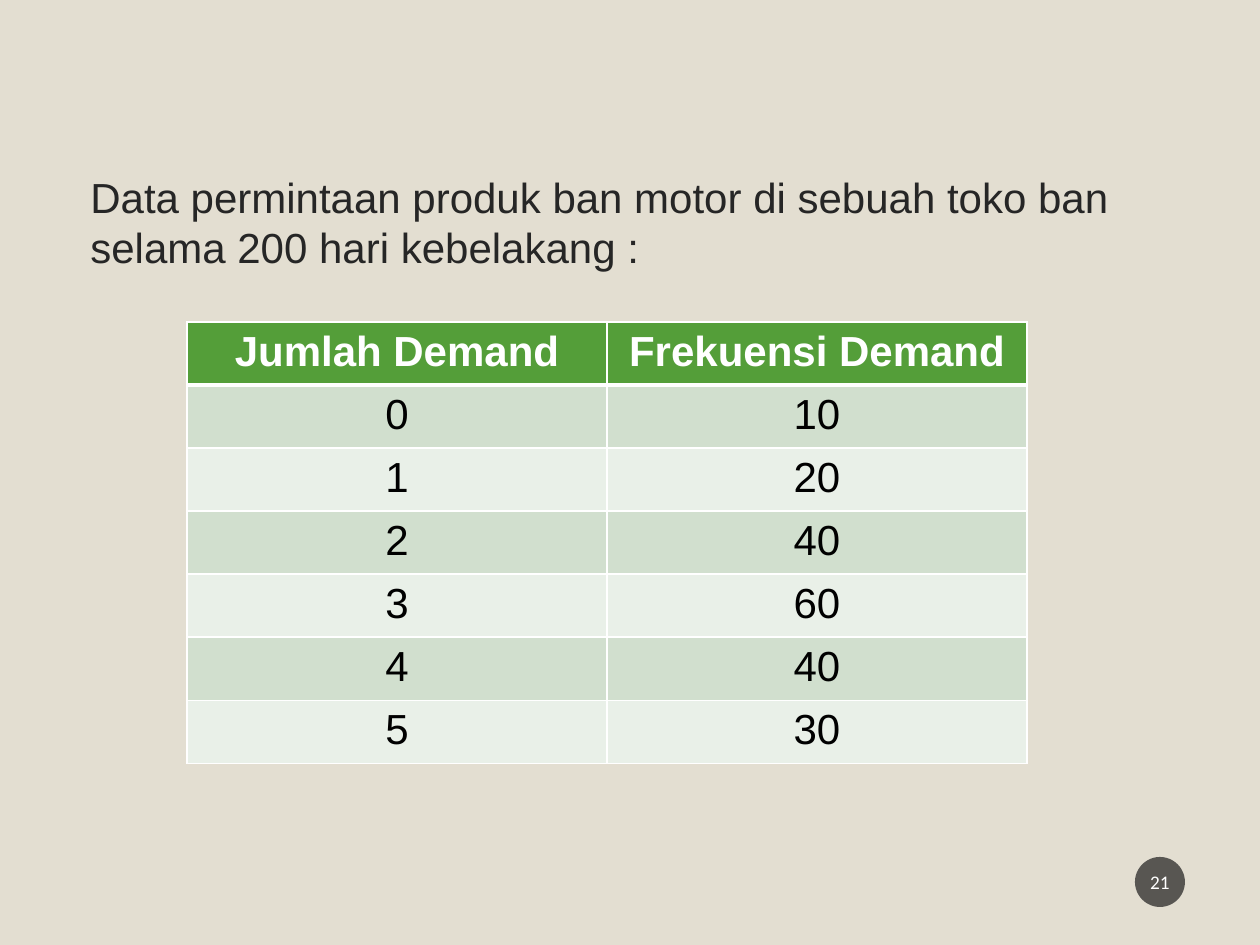
from dataclasses import dataclass

import pptx
import pptx.dml.color
import pptx.enum.shapes
import pptx.enum.text
import pptx.oxml
import pptx.oxml.ns
import pptx.util
from lxml import etree

PX_PER_INCH = 126
CENTER = pptx.enum.text.PP_ALIGN.CENTER
MIDDLE = pptx.enum.text.MSO_ANCHOR.MIDDLE


def px(length):
    return pptx.util.Emu(round(length * 914400 / PX_PER_INCH))


def rgb(color):
    return pptx.dml.color.RGBColor.from_string(color)


@dataclass(frozen=True)
class Theme:
    background: str = "E3DED1"
    body: str = "262626"
    header: str = "549E39"
    bands: tuple = ("D1DFCE", "E9F0E8")
    cell_text: str = "000000"
    light: str = "FFFFFF"
    badge: str = "1D1D1D"
    badge_opacity: int = 70
    font: str = "Arial"
    badge_font: str = "Calibri"
    text_size: int = 24
    badge_size: int = 11


class SlideBuilder:
    def __init__(self, theme, slide):
        self.theme = theme
        self.slide = slide
        fill = slide.background.fill
        fill.solid()
        fill.fore_color.rgb = rgb(theme.background)

    def add_line(self, frame, text, color, align=None, **font_format):
        """Put one formatted paragraph into a text frame."""
        paragraph = frame.paragraphs[0]
        paragraph.alignment = align
        run = paragraph.add_run()
        run.text = text
        values = {"name": self.theme.font,
                  "size": pptx.util.Pt(self.theme.text_size),
                  "bold": False} | font_format
        for key, value in values.items():
            setattr(run.font, key, value)
        run.font.color.rgb = rgb(color)
        return paragraph

    def text(self, left, top, width, height, text):
        box = self.slide.shapes.add_textbox(px(left), px(top), px(width), px(height))
        box.text_frame.word_wrap = True
        paragraph = self.add_line(box.text_frame, text, self.theme.body)
        paragraph.space_before = pptx.util.Pt(10)

    def badge(self, left, top, size, text):
        circle = self.slide.shapes.add_shape(
            pptx.enum.shapes.MSO_SHAPE.OVAL, px(left), px(top), px(size), px(size))
        circle.shadow.inherit = False
        circle.line.fill.background()
        circle.fill.solid()
        circle.fill.fore_color.rgb = rgb(self.theme.badge)
        color = circle._element.spPr.find(".//" + pptx.oxml.ns.qn("a:srgbClr"))
        etree.SubElement(color, pptx.oxml.ns.qn("a:alpha"),
                         val=str(self.theme.badge_opacity * 1000))
        frame = circle.text_frame
        frame_format = {"margin_left": px(2), "margin_right": px(2),
                        "vertical_anchor": MIDDLE, "word_wrap": True}
        for key, value in frame_format.items():
            setattr(frame, key, value)
        self.add_line(frame, text, self.theme.light, CENTER,
                      name=self.theme.badge_font,
                      size=pptx.util.Pt(self.theme.badge_size))

    def borders(self, cell, widths):
        """Draw the cell sides, given as side -> points."""
        properties = cell._tc.get_or_add_tcPr()
        for index, (side, points) in enumerate(widths.items()):
            line = pptx.oxml.parse_xml(
                f'<a:ln{side} {pptx.oxml.ns.nsdecls("a")} w="{pptx.util.Pt(points)}">'
                f'<a:solidFill><a:srgbClr val="{self.theme.light}"/></a:solidFill>'
                f'</a:ln{side}>')
            properties.insert(index, line)

    def table(self, left, top, width, row_height, rows):
        table = self.slide.shapes.add_table(
            len(rows), len(rows[0]), px(left), px(top),
            px(width), px(row_height * len(rows))).table
        for r, row in enumerate(rows):
            is_header = r == 0
            fill = self.theme.header if is_header else self.theme.bands[(r - 1) % 2]
            color = self.theme.light if is_header else self.theme.cell_text
            widths = {"L": 1, "R": 1, "T": 3 if r == 1 else 1,
                      "B": 3 if is_header else 1}
            for c, value in enumerate(row):
                cell = table.cell(r, c)
                cell.fill.solid()
                cell.fill.fore_color.rgb = rgb(fill)
                self.borders(cell, widths)
                self.add_line(cell.text_frame, str(value), color, CENTER, bold=is_header)


def main():
    deck = pptx.Presentation()
    deck.slide_width, deck.slide_height = px(1260), px(945)
    blank_layout = deck.slide_layouts[6]
    builder = SlideBuilder(Theme(), deck.slides.add_slide(blank_layout))

    # Introduction
    builder.text(78, 165, 1119, 137,
                 "Data permintaan produk ban motor di sebuah toko ban "
                 "selama 200 hari kebelakang :")

    # Page number
    builder.badge(1135, 857, 50, "21")

    # Demand frequencies
    demand = [("Jumlah Demand", "Frekuensi Demand"),
              (0, 10), (1, 20), (2, 40), (3, 60), (4, 40), (5, 30)]
    builder.table(187, 322, 840, 52, demand)

    deck.save("out.pptx")


if __name__ == "__main__":
    main()
